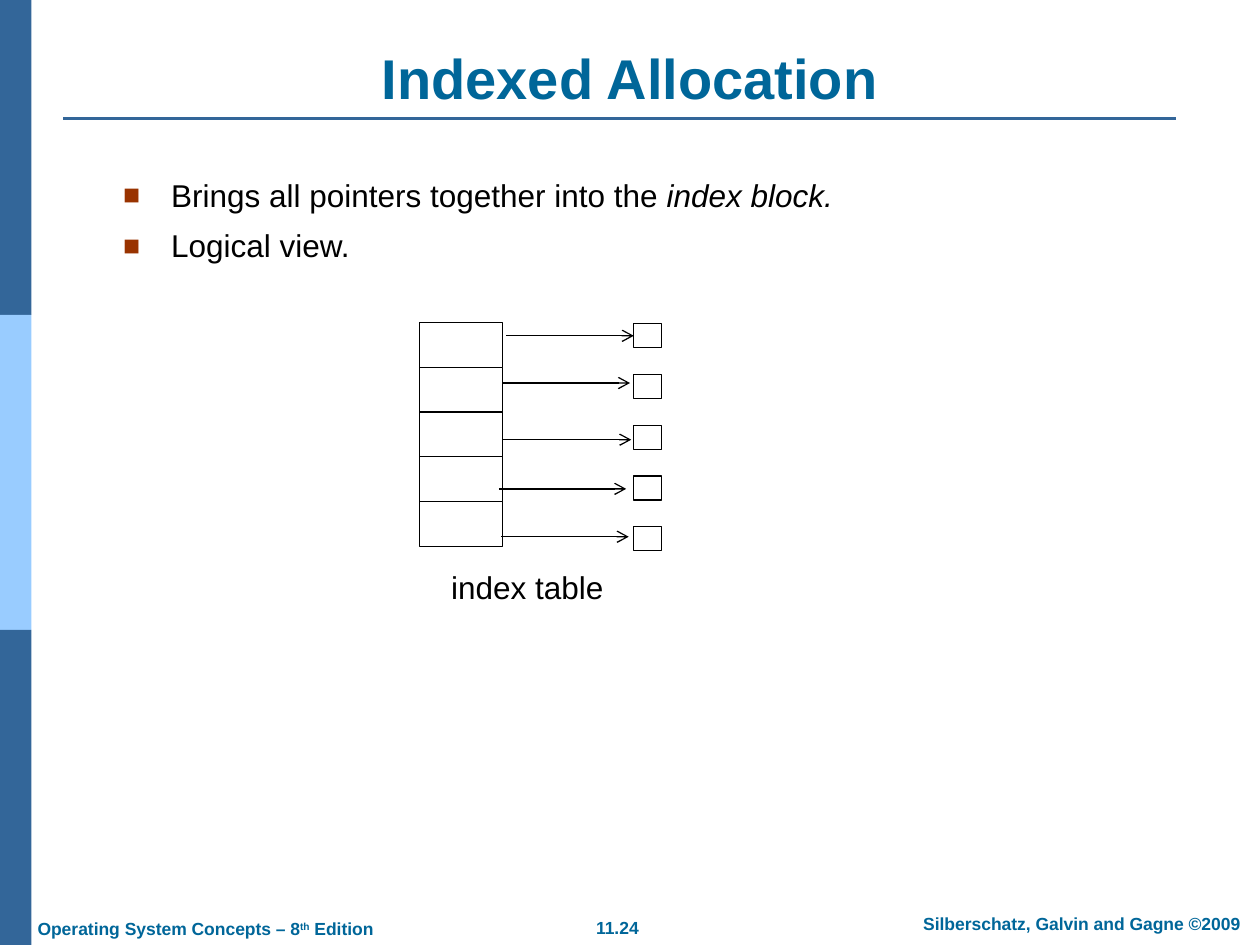
from lxml.etree import SubElement
from pptx import Presentation
from pptx.dml.color import RGBColor
from pptx.enum.shapes import MSO_CONNECTOR, MSO_SHAPE
from pptx.enum.text import MSO_ANCHOR, MSO_AUTO_SIZE, PP_ALIGN
from pptx.oxml.ns import qn
from pptx.util import Inches, Pt

COLORS = {"navy": "336699", "sky": "99CCFF", "teal": "006699",
          "rust": "993300", "black": "000000", "white": "FFFFFF"}
FONT = "Arial"
COLUMNS, ROWS = 40, 30


class SlideBuilder:
    """Places elements on a grid of 40 columns by 30 rows."""

    def __init__(self, deck):
        self.cell_width = deck.slide_width / COLUMNS
        self.cell_height = deck.slide_height / ROWS
        self.page = deck.slides.add_slide(deck.slide_layouts[5])

    def color(self, name):
        return RGBColor.from_string(COLORS[name])

    def place(self, column, row, width, height):
        return (round(column * self.cell_width), round(row * self.cell_height),
                round(width * self.cell_width), round(height * self.cell_height))

    def style(self, para, size, color, bold=False):
        for span in para.runs:
            font = span.font
            font.name, font.size, font.bold = FONT, Pt(size), bold
            font.color.rgb = self.color(color)

    def title(self, text, *area):
        box = self.page.shapes.title
        box.left, box.top, box.width, box.height = self.place(*area)
        frame = box.text_frame
        frame.text = text
        frame.auto_size = MSO_AUTO_SIZE.NONE
        frame.vertical_anchor = MSO_ANCHOR.BOTTOM
        para = frame.paragraphs[0]
        para.alignment = PP_ALIGN.CENTER
        self.style(para, 32, "teal", bold=True)

    def text(self, spans, area, size, color, bold=False, align=PP_ALIGN.CENTER):
        frame = self.page.shapes.add_textbox(*self.place(*area)).text_frame
        frame.word_wrap = True
        para = frame.paragraphs[0]
        para.alignment = align
        for words in spans:
            para.add_run().text = words
        self.style(para, size, color, bold)
        return para

    def bullets(self, items, *area):
        frame = self.page.shapes.add_textbox(*self.place(*area)).text_frame
        frame.word_wrap = True
        for index, (words, emphasis) in enumerate(items):
            para = frame.add_paragraph() if index else frame.paragraphs[0]
            self.add_bullet(para)
            if index:
                para.space_before = Pt(7)
            para.add_run().text = words
            if emphasis:
                para.add_run().text = emphasis
                para.runs[-1].font.italic = True
            self.style(para, 18, "black")

    def add_bullet(self, para):
        properties = para._p.get_or_add_pPr()
        properties.set("marL", str(Inches(0.38)))
        properties.set("indent", str(-Inches(0.38)))
        color = SubElement(properties, qn("a:buClr"))
        SubElement(color, qn("a:srgbClr"), val=COLORS["rust"])
        SubElement(properties, qn("a:buSzPct"), val="90000")
        SubElement(properties, qn("a:buFont"), typeface=FONT)
        SubElement(properties, qn("a:buChar"), char="■")

    def rectangle(self, area, fill, outline=None):
        shape = self.page.shapes.add_shape(MSO_SHAPE.RECTANGLE, *self.place(*area))
        shape.shadow.inherit = False
        shape.fill.solid()
        shape.fill.fore_color.rgb = self.color(fill)
        if outline:
            shape.line.color.rgb = self.color(outline)
            shape.line.width = Pt(0.75)
        else:
            shape.line.fill.background()
        return shape

    def line(self, start, end, row, color, weight, arrow=False):
        left, top, right, bottom = self.place(start, row, end, row)
        connector = self.page.shapes.add_connector(
            MSO_CONNECTOR.STRAIGHT, left, top, right, bottom)
        connector.line.color.rgb = self.color(color)
        connector.line.width = Pt(weight)
        if arrow:
            SubElement(connector.line._get_or_add_ln(), qn("a:tailEnd"), type="arrow")
        SubElement(connector._element.spPr, qn("a:effectLst"))
        return connector


def main():
    deck = Presentation()
    deck.slide_width, deck.slide_height = Inches(10), Inches(7.5)
    slide = SlideBuilder(deck)

    # Side band and title rule
    for index, fill in enumerate(["navy", "sky", "navy"]):
        slide.rectangle((0, index * 10, 1, 10), fill)
    slide.line(2, 37.32, 3.76, "navy", 1.5)

    # Footer
    slide.text(["11.24"], (17.98, 28.92, 3.24, 1.08), 10, "teal", bold=True)
    slide.text(["Silberschatz, Galvin and Gagne ©2009"],
               (28.68, 28.8, 11.32, 1.08), 10, "teal", bold=True)
    edition = slide.text(["Operating System Concepts – 8", "th", " Edition"],
                         (0.8, 28.96, 12, 1.04), 10, "teal", bold=True,
                         align=PP_ALIGN.LEFT)
    edition.runs[1].font._element.set("baseline", "30000")

    # Title and points
    slide.title("Indexed Allocation", 2, 1.2, 36, 2.52)
    slide.bullets([("Brings all pointers together into the ", "index block."),
                   ("Logical view.", None)], 3.52, 5.4, 36, 4.12)

    # Index table, data blocks and pointers
    pointers = [(16.08, 20.12, 10.66), (15.96, 20, 12.16), (15.96, 20.04, 13.96),
                (15.84, 19.88, 15.52), (15.92, 19.96, 17.04)]
    for index in range(len(pointers)):
        slide.rectangle((13.32, 10.24 + 1.42 * index, 2.64, 1.44), "white", "black")
    blocks = [slide.rectangle((20.12, 10.28 + 1.61 * index, 0.88, 0.76),
                              "white", "black") for index in range(len(pointers))]
    arrows = [slide.line(*pointer, "black", 0.75, arrow=True) for pointer in pointers]
    arrows[0].end_connect(blocks[0], 1)
    slide.text(["index table"], (13.42, 17.84, 6.64, 1.6), 18, "black")

    deck.save("out.pptx")


if __name__ == "__main__":
    main()
